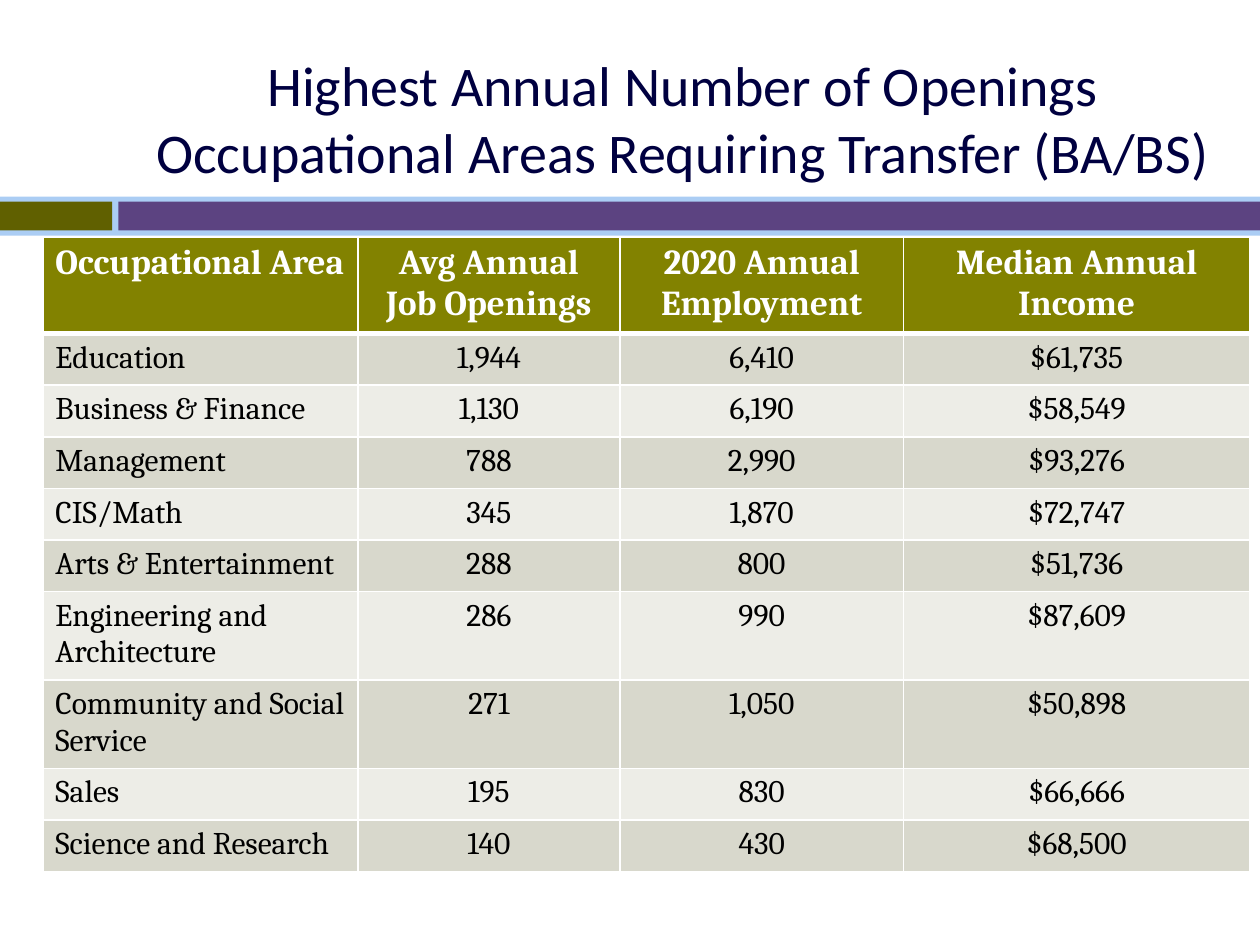
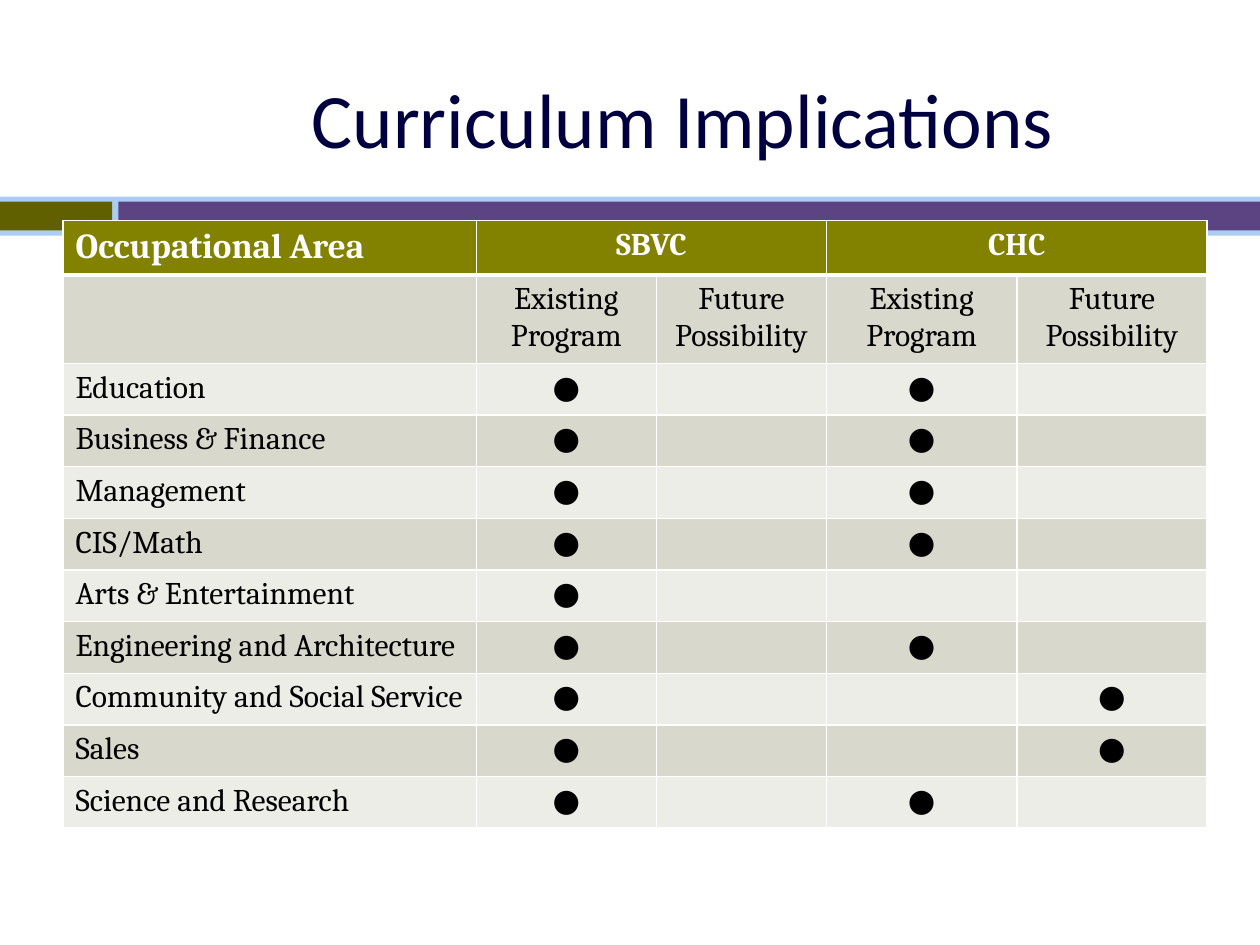
import pptx
import pptx.util
import pptx.dml.color
import pptx.enum.shapes
import pptx.enum.text
import pptx.oxml
from pptx.util import Inches

ALIGN = pptx.enum.text.PP_ALIGN
NAVY, OLIVE, WHITE, BLACK = "000040", "828200", "FFFFFF", "000000"
ROW_FILLS = ["EDEDE7", "D8D8CC"]
BANDS = [
    (0, 1.56, 10, 0.31, "ABCDF4"),
    (0, 1.6, 0.89, 0.23, "606000"),
    (0.94, 1.6, 9.06, 0.23, "5C4381"),
]
AREAS = [
    "Education", "Business & Finance", "Management", "CIS/Math",
    "Arts & Entertainment", "Engineering and Architecture",
    "Community and Social Service", "Sales", "Science and Research",
]
OPENINGS = [
    ("1,944", "6,410", "$61,735"),
    ("1,130", "6,190", "$58,549"),
    ("788", "2,990", "$93,276"),
    ("345", "1,870", "$72,747"),
    ("288", "800", "$51,736"),
    ("286", "990", "$87,609"),
    ("271", "1,050", "$50,898"),
    ("195", "830", "$66,666"),
    ("140", "430", "$68,500"),
]
CHC_EXISTING = {"Education", "Business & Finance", "Management", "CIS/Math",
                "Engineering and Architecture", "Science and Research"}
CHC_FUTURE = {"Community and Social Service", "Sales"}

opening_rows = [("Occupational Area", "Avg Annual Job Openings",
                 "2020 Annual Employment", "Median Annual Income")]
opening_rows += [(area, *figures) for area, figures in zip(AREAS, OPENINGS)]

program_rows = [
    ("Occupational Area", "SBVC", "", "CHC", ""),
    ("",) + ("Existing Program", "Future Possibility") * 2,
]
for area in AREAS:
    program_rows.append((area, "●", "",
                         "●" if area in CHC_EXISTING else "",
                         "●" if area in CHC_FUTURE else ""))

SLIDES = [
    ("Highest Annual Number of Openings Occupational Areas Requiring Transfer (BA/BS)",
     32, 0.34, 1.88, [2.5, 2.08, 2.25, 2.75], opening_rows, [], 20),
    ("Curriculum Implications",
     44, 0.5, 1.75, [3.28, 1.43, 1.35, 1.51, 1.51], program_rows, [1, 3], 18),
]


def color(value):
    return pptx.dml.color.RGBColor.from_string(value)


def style_text(paragraph, name, size, text_color, bold, alignment):
    paragraph.font.name = name
    paragraph.font.size = pptx.util.Pt(size)
    paragraph.font.color.rgb = color(text_color)
    paragraph.font.bold = bold
    paragraph.alignment = alignment


deck = pptx.Presentation()
deck.slide_width, deck.slide_height = Inches(10), Inches(7.5)

for title, title_size, left, top, widths, rows, merges, header_size in SLIDES:
    page = deck.slides.add_slide(deck.slide_layouts[6])

    for x, y, width, height, fill in BANDS:
        band = page.shapes.add_shape(pptx.enum.shapes.MSO_SHAPE.RECTANGLE,
                                     Inches(x), Inches(y), Inches(width), Inches(height))
        band.shadow.inherit = False
        band.fill.solid()
        band.fill.fore_color.rgb = color(fill)
        band.line.fill.background()

    box = page.shapes.add_textbox(Inches(0.92), Inches(0.31), Inches(9), Inches(1.25))
    box.text_frame.word_wrap = True
    box.text_frame.vertical_anchor = pptx.enum.text.MSO_ANCHOR.MIDDLE
    box.text_frame.text = title
    style_text(box.text_frame.paragraphs[0], "Calibri", title_size, NAVY, False, ALIGN.CENTER)

    table = page.shapes.add_table(len(rows), len(widths), Inches(left), Inches(top),
                                  Inches(sum(widths)), Inches(0.41 * len(rows))).table
    for column, width in zip(table.columns, widths):
        column.width = Inches(width)

    for row_index, row in enumerate(rows):
        table.rows[row_index].height = Inches(0.41)
        header = row_index == 0
        for column_index, text in enumerate(row):
            cell = table.cell(row_index, column_index)
            cell.text = text
            size = 18
            if header:
                size = 20 if column_index == 0 else header_size
            style_text(cell.text_frame.paragraphs[0], "Cambria", size,
                       WHITE if header else BLACK, header,
                       ALIGN.LEFT if column_index == 0 else ALIGN.CENTER)
            cell.fill.solid()
            cell.fill.fore_color.rgb = color(OLIVE if header else ROW_FILLS[row_index % 2])
            edges = {"L": 1, "R": 1, "T": 3 if row_index == 1 else 1, "B": 3 if header else 1}
            for position, (edge, points) in enumerate(edges.items()):
                border = pptx.oxml.parse_xml(
                    f'<a:ln{edge} xmlns:a="http://schemas.openxmlformats.org/drawingml/2006/main"'
                    f' w="{pptx.util.Pt(points)}"><a:solidFill><a:srgbClr val="{WHITE}"/>'
                    f'</a:solidFill></a:ln{edge}>')
                cell._tc.get_or_add_tcPr().insert(position, border)

    for first in merges:
        table.cell(0, first).merge(table.cell(0, first + 1))

deck.save("out.pptx")
